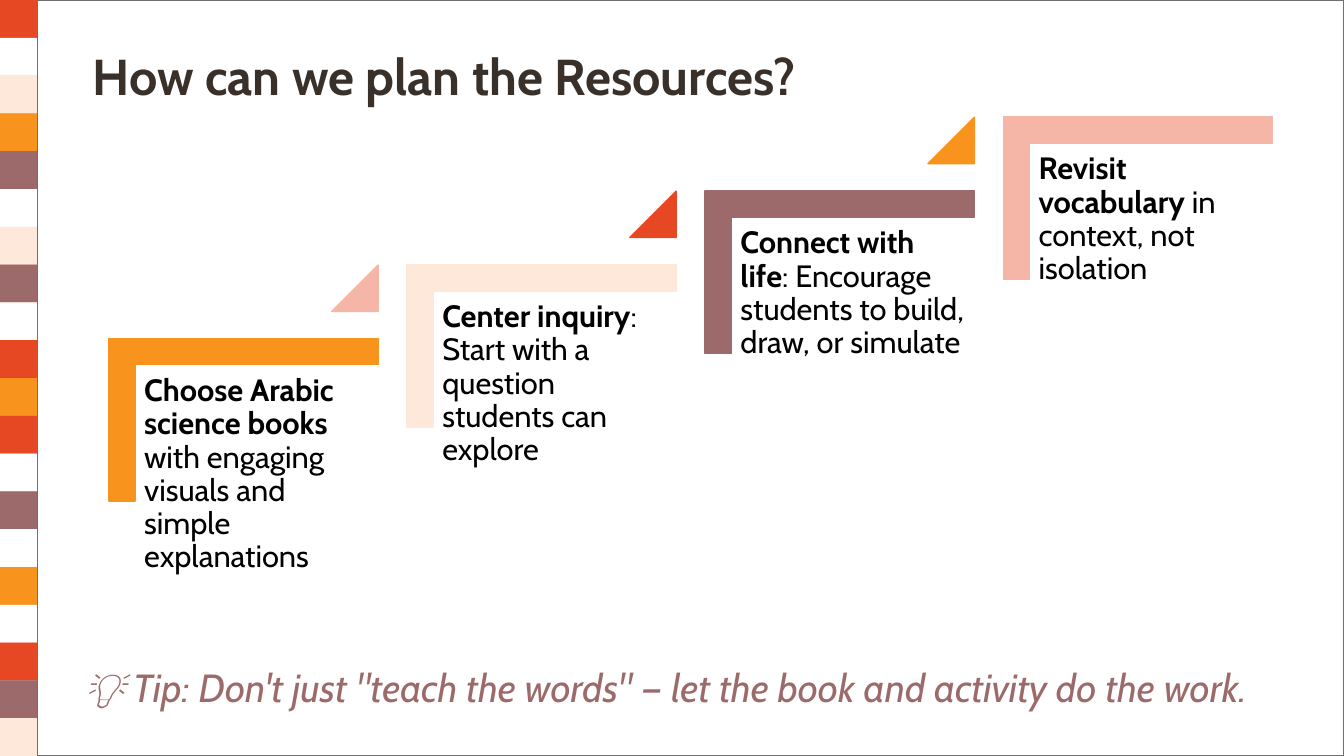
from pptx import Presentation
from pptx.dml.color import RGBColor
from pptx.enum.shapes import MSO_SHAPE
from pptx.enum.text import MSO_ANCHOR, MSO_AUTO_SIZE, PP_ALIGN
from pptx.util import Inches, Pt

RECTANGLE = MSO_SHAPE.RECTANGLE
CORNER = MSO_SHAPE.CORNER
TRIANGLE = MSO_SHAPE.ISOSCELES_TRIANGLE
TOP = MSO_ANCHOR.TOP
LEFT = PP_ALIGN.LEFT
NO_AUTO_SIZE = MSO_AUTO_SIZE.NONE

FONT = "Cabin"
RED, ORANGE, MAUVE = "E64823", "F8931D", "9C6A6A"
PINK, CREAM, WHITE = "F5B5A7", "FEE8DA", "FFFFFF"
BROWN, BLACK, GREY = "39302A", "000000", "707070"

STRIPES = [RED, WHITE, CREAM, ORANGE, MAUVE, WHITE, CREAM, MAUVE, WHITE, RED,
           ORANGE, RED, WHITE, MAUVE, WHITE, ORANGE, WHITE, RED, MAUVE, CREAM]

# Bracket colour, triangle colour, bold lead, remaining text
STEPS = [
    (ORANGE, PINK, "Choose Arabic science books",
     " with engaging visuals and simple explanations"),
    (CREAM, RED, "Center inquiry", ": Start with a question students can explore"),
    (MAUVE, ORANGE, "Connect with life",
     ": Encourage students to build, draw, or simulate"),
    (PINK, None, "Revisit vocabulary", " in context, not isolation"),
]


def rgb(color):
    return RGBColor.from_string(color)


def add_block(page, kind, left, top, width, height, fill, line=None):
    block = page.shapes.add_shape(
        kind, Inches(left), Inches(top), Inches(width), Inches(height))
    block.shadow.inherit = False
    block.fill.solid()
    block.fill.fore_color.rgb = rgb(fill)
    if line:
        block.line.color.rgb = rgb(line)
        block.line.width = Pt(1)
    else:
        block.line.fill.background()
    return block


def add_span(para, text, size=22, color=BLACK, bold=False, italic=False):
    span = para.add_run()
    span.text = text
    span.font.name = FONT
    span.font.size = Pt(size)
    span.font.bold = bold
    span.font.italic = italic
    span.font.color.rgb = rgb(color)


def add_text_box(page, left, top, width, height, inset_x=0.1, inset_y=0.05):
    box = page.shapes.add_textbox(
        Inches(left), Inches(top), Inches(width), Inches(height))
    frame = box.text_frame
    frame.word_wrap = True
    frame.margin_left = frame.margin_right = Inches(inset_x)
    frame.margin_top = frame.margin_bottom = Inches(inset_y)
    return frame


def add_stripes(page, left, top, width, height):
    stripe_height = height / len(STRIPES)
    for index, color in enumerate(STRIPES):
        add_block(page, RECTANGLE, left, top + index * stripe_height,
                  width, stripe_height, color)


def add_title(page, left, top, width, height):
    title = page.shapes.title
    title.left, title.top = Inches(left), Inches(top)
    title.width, title.height = Inches(width), Inches(height)
    # Bring the title in front of the white panel
    title.element.getparent().append(title.element)
    frame = title.text_frame
    frame.word_wrap = True
    frame.auto_size = NO_AUTO_SIZE
    frame.vertical_anchor = TOP
    frame.margin_left = 0
    frame.margin_right = Inches(0.1)
    frame.margin_top = frame.margin_bottom = Inches(0.05)
    para = frame.paragraphs[0]
    para.alignment = LEFT
    para.line_spacing = 0.8
    add_span(para, "How can we plan the Resources?", size=36, color=BROWN, bold=True)


def add_step(page, left, top, width, height, step):
    bracket_color, triangle_color, lead, rest = step

    # Bracket: an L shape turned a quarter, so its sides are swapped
    shift = (width - height) / 2
    bracket = add_block(page, CORNER, left + shift, top - shift, height, width,
                        bracket_color, bracket_color)
    bracket.rotation = 90
    bracket.adjustments[0] = bracket.adjustments[1] = 0.161

    # Step text inside the bracket
    frame = add_text_box(page, left + 0.26, top + 0.27, width - 0.26, 2.12, 0.09, 0.09)
    para = frame.paragraphs[0]
    para.line_spacing = 0.9
    add_span(para, lead, bold=True)
    add_span(para, rest)

    # Triangle that leads up to the next step
    if triangle_color:
        side = 0.46
        triangle = add_block(page, TRIANGLE, left + width - side, top - 0.73,
                             side, side, triangle_color, triangle_color)
        triangle.adjustments[0] = 1


def add_staircase(page, left, top, step_right, step_up):
    for index, step in enumerate(STEPS):
        add_step(page, left + index * step_right, top - index * step_up,
                 2.67, 1.61, step)


def add_tip(page, left, top, width, height):
    frame = add_text_box(page, left, top, width, height)
    add_span(frame.paragraphs[0],
             '💡 Tip: Don\'t just "teach the words" — let the book and activity do the work.',
             size=28, color=MAUVE, italic=True)


def main():
    deck = Presentation()
    deck.slide_width, deck.slide_height = Inches(13.33), Inches(7.5)
    page = deck.slides.add_slide(deck.slide_layouts[5])
    page.background.fill.solid()
    page.background.fill.fore_color.rgb = rgb(PINK)

    add_stripes(page, 0, 0, 0.38, 7.5)
    add_block(page, RECTANGLE, 0.37, 0, 12.96, 7.5, WHITE, GREY)
    add_title(page, 0.92, 0.51, 8.77, 0.92)
    add_staircase(page, 1.08, 3.36, step_right=2.957, step_up=0.733)
    add_tip(page, 0.73, 6.53, 12.57, 0.57)
    deck.save("out.pptx")


if __name__ == "__main__":
    main()
